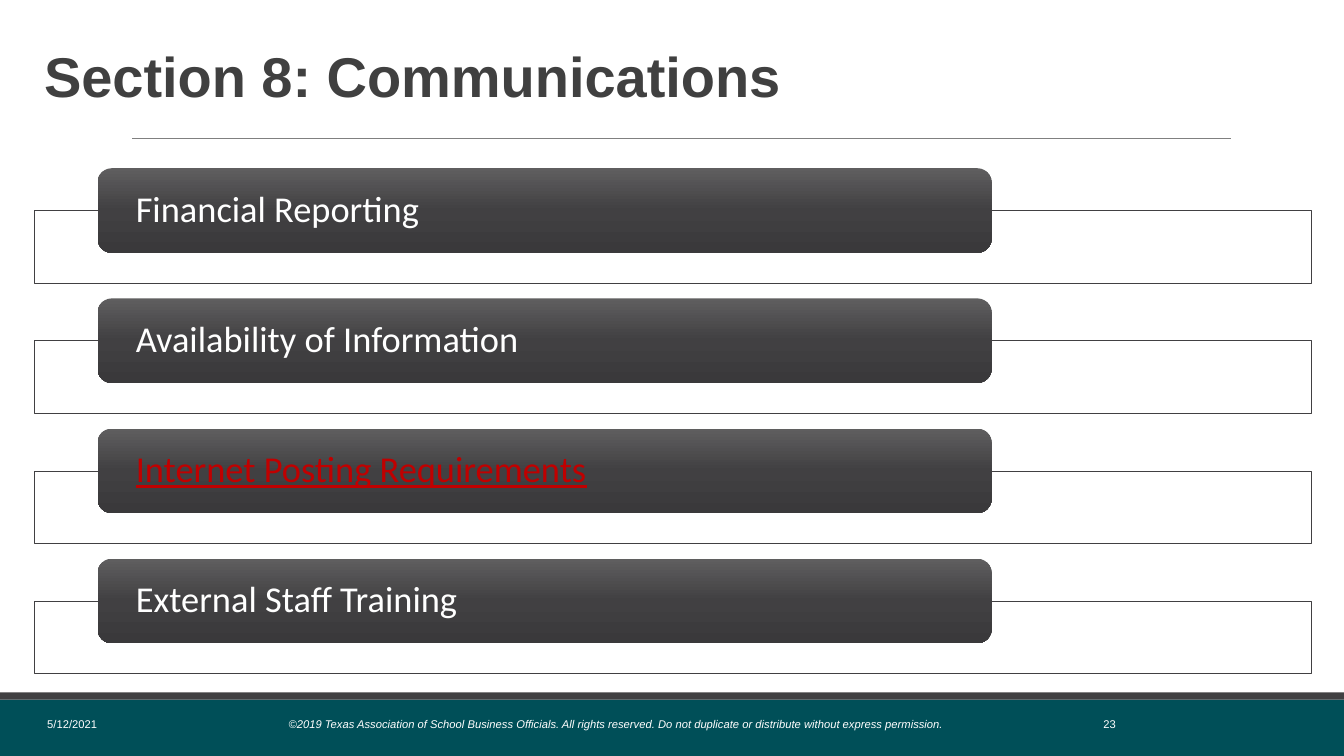
"""Build the Section 8 communications slide."""
from copy import deepcopy

from lxml.etree import SubElement
from pptx import Presentation
from pptx.dml.color import RGBColor
from pptx.enum.shapes import MSO_CONNECTOR, MSO_SHAPE
from pptx.enum.text import MSO_ANCHOR, PP_ALIGN
from pptx.oxml.ns import qn
from pptx.util import Cm, Pt


def color(code):
    """Turn a hex string into a colour."""
    return RGBColor.from_string(code)


def apply(target, values):
    """Set each named value on the target."""
    for name, value in values.items():
        setattr(target, name, value)


class Deck:
    """Hold the style and the current slide."""

    dark, teal, white, red = "414042", "004F58", "FFFFFF", "C00000"
    shade = [(0, "5F5E5F"), (0.5, dark), (1, "3A393B")]
    head = {"name": "Arial", "size": Pt(40), "bold": True}
    foot = {"name": "Arial", "size": Pt(8)}
    item = {"name": "Calibri", "size": Pt(26)}

    def __init__(self):
        """Open a deck with one blank slide."""
        self.show = Presentation()
        apply(self.show, {"slide_width": Cm(33.87), "slide_height": Cm(19.05)})
        self.slide = self.show.slides.add_slide(self.show.slide_layouts[6])

    def shape(self, kind, area):
        """Add a preset shape with no shadow or line."""
        form = self.slide.shapes.add_shape(kind, *map(Cm, area))
        form.shadow.inherit = False
        form.line.fill.background()
        return form

    def block(self, area, fill):
        """Add a plain filled rectangle."""
        form = self.shape(MSO_SHAPE.RECTANGLE, area)
        form.fill.solid()
        form.fill.fore_color.rgb = color(fill)
        return form

    def frame(self, area):
        """Add an outlined, slightly clear rectangle."""
        form = self.block(area, self.white)
        tint = form._element.spPr.find(qn("a:solidFill"))[0]
        SubElement(tint, qn("a:alpha"), val="90000")
        form.line.color.rgb = color(self.dark)
        form.line.width = Pt(0.5)

    def label(self, area, words, ink):
        """Add a shaded rounded label."""
        form = self.shape(MSO_SHAPE.ROUNDED_RECTANGLE, area)
        form.fill.gradient()
        form.fill.gradient_angle = 270
        stops = form._element.spPr.find(".//" + qn("a:gsLst"))
        stops.insert(1, deepcopy(stops[0]))
        for stop, (place, code) in zip(form.fill.gradient_stops, self.shade):
            stop.position = place
            stop.color.rgb = color(code)
        apply(form.text_frame, {"margin_left": Cm(0.86), "margin_right": Cm(0.86),
                                "margin_top": 0, "margin_bottom": 0})
        style = {**self.item, "underline": ink == self.red}
        self.letter(form, words, style, ink, line_spacing=0.9)

    def text(self, area, words, style, ink, **layout):
        """Add a text box."""
        box = self.slide.shapes.add_textbox(*map(Cm, area))
        self.letter(box, words, style, ink, **layout)

    def letter(self, form, words, style, ink, **layout):
        """Put styled words into a shape."""
        apply(form.text_frame, {"word_wrap": True, "vertical_anchor": MSO_ANCHOR.MIDDLE})
        line = form.text_frame.paragraphs[0]
        apply(line, {"alignment": PP_ALIGN.LEFT, **layout})
        run = line.add_run()
        run.text = words
        apply(run.font, style)
        run.font.color.rgb = color(ink)

    def rule(self, left, right, top):
        """Add a thin level line."""
        line = self.slide.shapes.add_connector(
            MSO_CONNECTOR.STRAIGHT, Cm(left), Cm(top), Cm(right), Cm(top))
        line.line.color.rgb = color("808080")
        line.line.width = Pt(0.5)
        SubElement(line._element.spPr, qn("a:effectLst"))


def main():
    """Draw the slide and save it."""
    deck = Deck()
    deck.block((0, 17.63, 33.87, 1.42), deck.teal)
    deck.block((0, 17.45, 33.87, 0.18), deck.dark)
    deck.rule(3.33, 31.01, 3.48)
    deck.text((0.86, 0.71, 32.18, 2.57), "Section 8: Communications",
              deck.head, "404040", line_spacing=0.9)

    notice = ("©2019 Texas Association of School Business Officials. All rights reserved. "
              "Do not duplicate or distribute without express permission.")
    for left, width, words, side, slant in (
            (0.94, 5.38, "5/12/2021", PP_ALIGN.LEFT, False),
            (6.99, 17.09, notice, PP_ALIGN.CENTER, True),
            (24.74, 3.63, "23", PP_ALIGN.RIGHT, False)):
        deck.text((left, 17.73, width, 1.02), words,
                  {**deck.foot, "italic": slant}, deck.white, alignment=side)

    topics = (("Financial Reporting", deck.white),
              ("Availability of Information", deck.white),
              ("Internet Posting Requirements", deck.red),
              ("External Staff Training", deck.white))
    for row, (topic, ink) in enumerate(topics):
        top = 4.24 + 3.28 * row
        deck.frame((0.86, top + 1.07, 32.18, 1.83))
        deck.label((2.46, top, 22.53, 2.13), topic, ink)

    deck.show.save("out.pptx")


if __name__ == "__main__":
    main()
